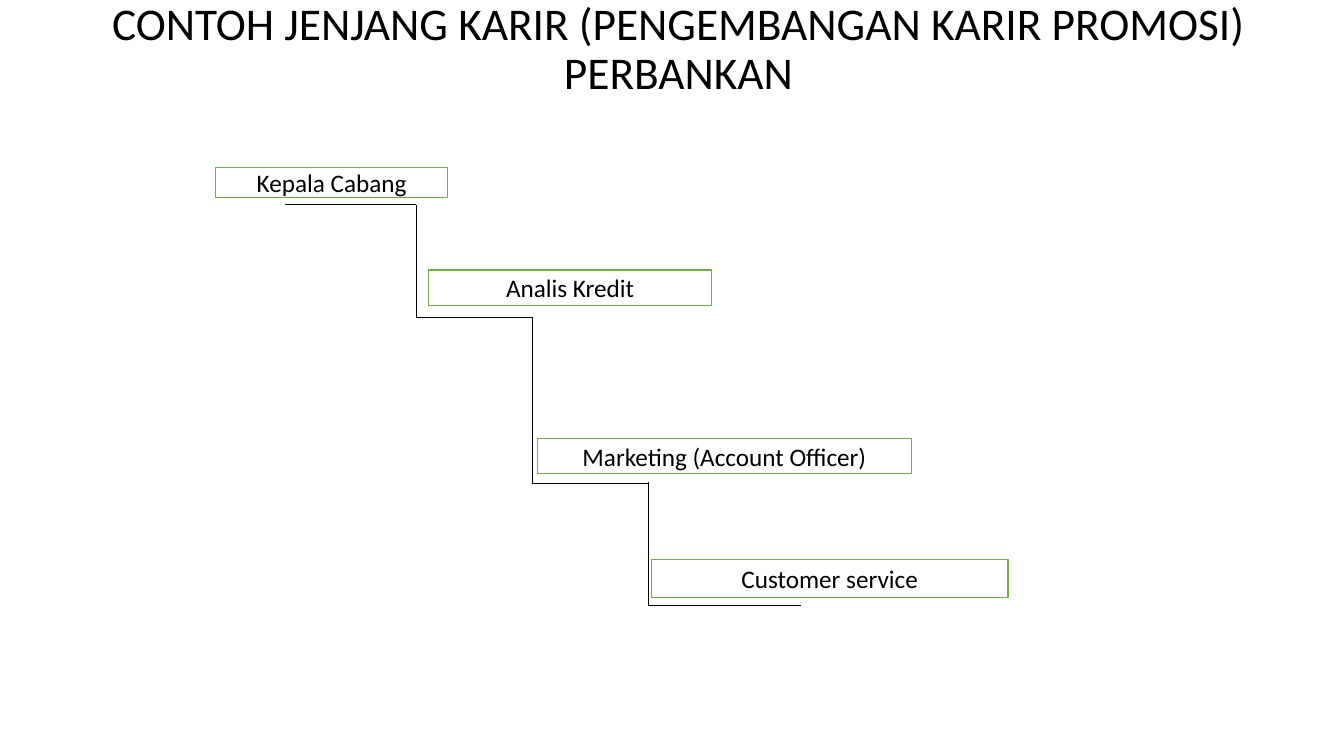
from pptx import Presentation
from pptx.dml.color import RGBColor
from pptx.enum.shapes import MSO_CONNECTOR, MSO_SHAPE
from pptx.enum.text import MSO_ANCHOR, MSO_AUTO_SIZE, PP_ALIGN
from pptx.oxml.ns import qn
from pptx.util import Pt
from lxml.etree import SubElement

PX = 9144  # 100 px to the inch
THEME = {
    "font": "Calibri",
    "ink": RGBColor(0x00, 0x00, 0x00),
    "paper": RGBColor(0xFF, 0xFF, 0xFF),
    "edge": RGBColor(0x70, 0xAD, 0x47),
    "title": Pt(32.4),
    "label": Pt(18),
}


def place(shape, *box):
    shape.left, shape.top, shape.width, shape.height = [n * PX for n in box]


def write(shape, text, size, anchor):
    frame = shape.text_frame
    frame.text = text
    frame.word_wrap = True
    frame.auto_size = MSO_AUTO_SIZE.NONE
    frame.vertical_anchor = anchor
    line = frame.paragraphs[0]
    line.alignment = PP_ALIGN.CENTER
    font = line.runs[0].font
    font.name, font.size = THEME["font"], size
    font.color.rgb = THEME["ink"]
    return line


deck = Presentation()
deck.slide_width, deck.slide_height = 1333 * PX, 750 * PX
slide = deck.slides.add_slide(deck.slide_layouts[5])
shapes = slide.shapes

# Title
title = shapes.title
place(title, 71, 38, 1204, 66)
head = write(title, "CONTOH JENJANG KARIR (PENGEMBANGAN KARIR PROMOSI) PERBANKAN",
             THEME["title"], MSO_ANCHOR.BOTTOM)
head.line_spacing = 0.9

# Staircase
STAIRS = [
    (MSO_CONNECTOR.STRAIGHT, 283, 203, 413, 203),
    (MSO_CONNECTOR.STRAIGHT, 413, 203, 413, 315),
    (MSO_CONNECTOR.ELBOW, 413, 315, 643, 480),
    (MSO_CONNECTOR.STRAIGHT, 643, 478, 643, 600),
    (MSO_CONNECTOR.STRAIGHT, 643, 601, 794, 601),
]
for kind, *ends in STAIRS:
    step = shapes.add_connector(kind, *[n * PX for n in ends])
    step.line.color.rgb = THEME["ink"]
    step.line.width = Pt(0.5)
    SubElement(step.element.spPr, qn("a:effectLst"))

# Positions, from the top of the ladder down
JOBS = [
    ("Kepala Cabang", 214, 166, 230, 30),
    ("Analis Kredit", 425, 268, 281, 35),
    ("Marketing (Account Officer)", 533, 435, 371, 35),
    ("Customer service", 646, 555, 354, 38),
]
for name, *box in JOBS:
    job = shapes.add_shape(MSO_SHAPE.RECTANGLE, *[n * PX for n in box])
    job.shadow.inherit = False
    job.fill.solid()
    job.fill.fore_color.rgb = THEME["paper"]
    job.line.color.rgb = THEME["edge"]
    job.line.width = Pt(1)
    write(job, name, THEME["label"], MSO_ANCHOR.MIDDLE)

deck.save("out.pptx")
